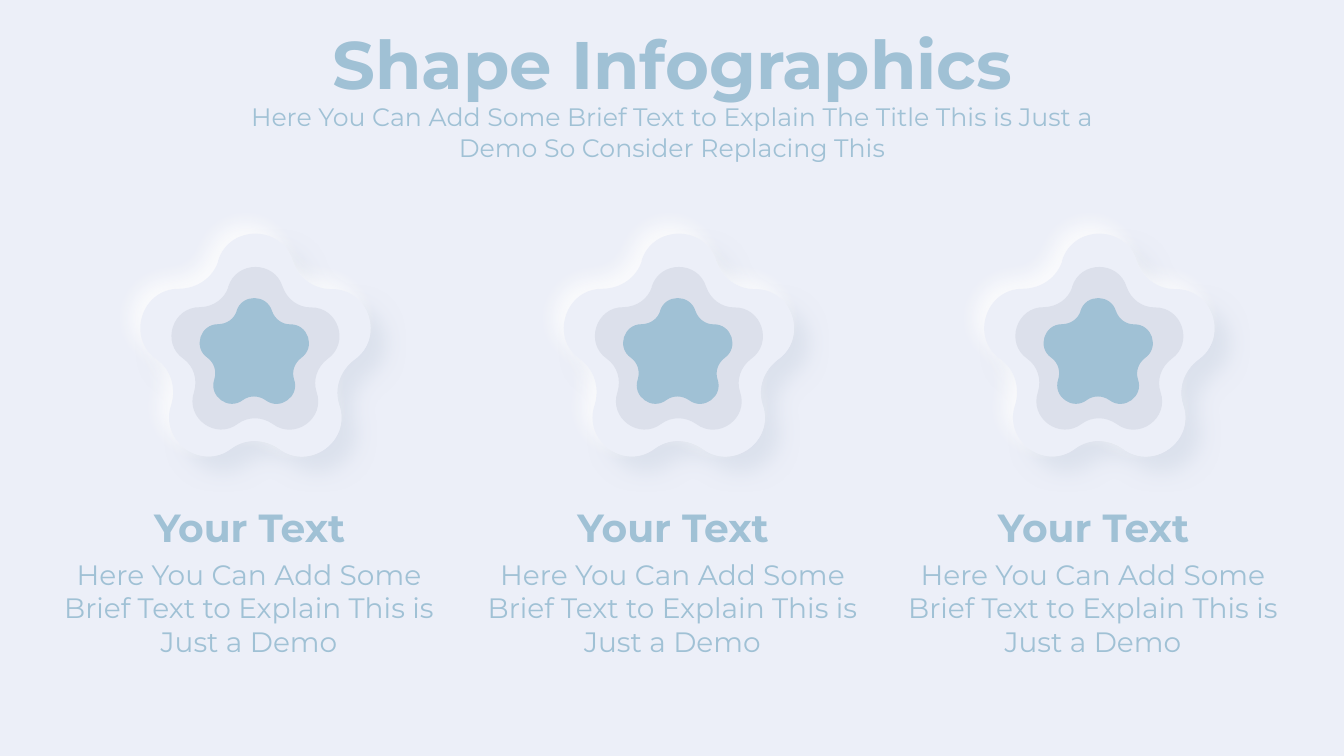
from dataclasses import dataclass
from math import cos, radians, sin

from lxml import etree
from pptx import Presentation
from pptx.dml.color import RGBColor
from pptx.enum.text import MSO_AUTO_SIZE, PP_ALIGN
from pptx.oxml.ns import qn
from pptx.util import Inches, Pt

CENTER = PP_ALIGN.CENTER
GROW = MSO_AUTO_SIZE.SHAPE_TO_FIT_TEXT


@dataclass(frozen=True)
class Theme:
    font: str = "Montserrat"
    background: str = "ECEFF8"
    ring: str = "DCE0EB"
    accent: str = "A0C1D5"
    shade: str = "D1D9E6"
    light: str = "FFFFFF"
    title: int = 48
    subtitle: int = 18
    heading: int = 28
    body: int = 20


THEME = Theme()
COLUMNS = (0.3, 4.5, 8.67)
STAR_TILT = 32.6
STAR_SIZE = (2.27, 2.23)
STAR_CENTER = (1.15, 1.05)
LOBE_START = (-0.37, -0.91)
LOBE = ((-0.26, -1.27), (0.26, -1.27), (0.37, -0.91))
VALLEY = ((0.43, -0.74), (0.58, -0.63), (0.75, -0.63))


def rgb(color):
    return RGBColor.from_string(color)


def add_text(s, text, x, y, w, h, size, bold=False):
    tb = s.shapes.add_textbox(Inches(x), Inches(y), Inches(w), Inches(h))
    tf = tb.text_frame
    tf.word_wrap = True
    tf.auto_size = GROW
    p = tf.paragraphs[0]
    p.alignment = CENTER
    r = p.add_run()
    r.text = text
    r.font.name = THEME.font
    r.font.size = Pt(size)
    r.font.bold = bold
    r.font.color.rgb = rgb(THEME.accent)


def add_segment(outline, tag, points, angle, scale):
    segment = etree.SubElement(outline, qn(tag))
    c, d = cos(radians(angle)), sin(radians(angle))
    for x, y in points:
        px = STAR_CENTER[0] + x * c - y * d
        py = STAR_CENTER[1] + x * d + y * c
        etree.SubElement(segment, qn("a:pt"),
                         x=str(Inches(px * scale)), y=str(Inches(py * scale)))


def draw_star_outline(sp, scale):
    outline = sp._element.find(".//" + qn("a:path"))
    for child in list(outline):
        outline.remove(child)
    add_segment(outline, "a:moveTo", [LOBE_START], -STAR_TILT, scale)
    for k in range(5):
        for curve in (LOBE, VALLEY):
            add_segment(outline, "a:cubicBezTo", curve, 72 * k - STAR_TILT, scale)
    etree.SubElement(outline, qn("a:close"))


def add_shadow(sp, color, alpha, distance, direction):
    effects = sp._element.spPr.find(qn("a:effectLst"))
    shadow = etree.SubElement(
        effects, qn("a:outerShdw"), blurRad=str(Pt(15)), dist=str(Pt(distance)),
        dir=str(direction * 60000), algn="ctr", rotWithShape="0")
    clr = etree.SubElement(shadow, qn("a:srgbClr"), val=color)
    etree.SubElement(clr, qn("a:alpha"), val=str(alpha * 1000))


def add_star(shapes, x, y, fill, scale=1):
    w, h = (Inches(side * scale) for side in STAR_SIZE)
    builder = shapes.build_freeform(0, 0)
    builder.add_line_segments([(w, 0), (w, h), (0, h)])
    sp = builder.convert_to_shape(Inches(x), Inches(y))
    draw_star_outline(sp, scale)
    sp.rotation = STAR_TILT
    sp.fill.solid()
    sp.fill.fore_color.rgb = rgb(fill)
    sp.line.fill.background()
    sp.shadow.inherit = False
    return sp


def add_column(s, x):
    group = s.shapes.add_group_shape()
    for shadow in ((THEME.shade, 60, 15, 45), (THEME.light, 80, 10, 225)):
        add_shadow(add_star(group.shapes, x + 1.05, 2.43, THEME.background), *shadow)
    add_star(s.shapes, x + 1.37, 2.73, THEME.ring, 0.73)
    add_star(s.shapes, x + 1.66, 3.01, THEME.accent, 0.475)
    add_text(s, "Your Text", x, 4.94, 4.35, 0.57, THEME.heading, True)
    add_text(s, "Here You Can Add Some Brief Text to Explain This is Just a Demo",
             x, 5.48, 4.34, 1.11, THEME.body)


def main():
    prs = Presentation()
    prs.slide_width, prs.slide_height = Inches(13.33), Inches(7.5)
    s = prs.slides.add_slide(prs.slide_layouts[6])
    s.background.fill.solid()
    s.background.fill.fore_color.rgb = rgb(THEME.background)
    add_text(s, "Shape Infographics", 2.78, 0.17, 7.78, 0.91, THEME.title, True)
    add_text(s, "Here You Can Add Some Brief Text to Explain The Title "
                "This is Just a Demo So Consider Replacing This",
             2.3, 0.96, 8.73, 0.71, THEME.subtitle)
    for x in COLUMNS:
        add_column(s, x)
    prs.save("out.pptx")


if __name__ == "__main__":
    main()
